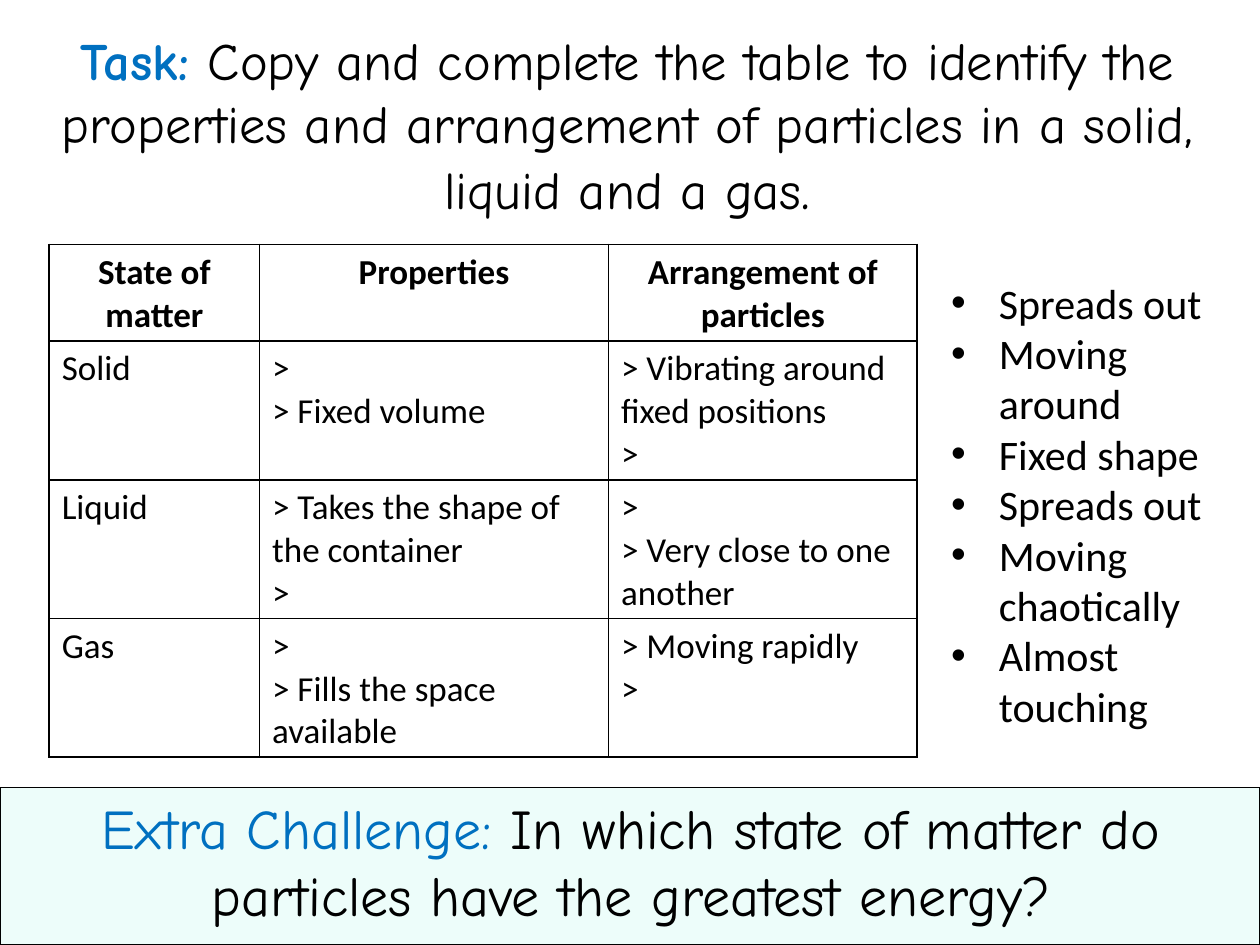
from dataclasses import dataclass

from lxml.etree import SubElement as Sub
from pptx import Presentation as Deck
from pptx.dml.color import RGBColor as Rgb
from pptx.enum.shapes import MSO_SHAPE as Shape
from pptx.enum.text import MSO_AUTO_SIZE as Fit, PP_ALIGN as Align
from pptx.oxml.ns import qn
from pptx.util import Inches, Pt


@dataclass(frozen=True)
class Theme:
    ink: str = "000000"
    blue: str = "0070C0"
    mint: str = "EDFDFA"
    hand: str = "Comic Neue"
    plain: str = "Calibri"
    task: int = 30
    large: int = 32
    list: int = 24
    cell: int = 20
    line: int = 1


class Page:
    def __init__(self, slide, theme):
        self.slide = slide
        self.theme = theme

    def run(self, para, text, font, size, color=None, bold=False):
        run = para.add_run()
        run.text = text
        run.font.name = font
        run.font.size = Pt(size)
        run.font.bold = bold
        run.font.color.rgb = Rgb.from_string(color or self.theme.ink)

    def panel(self, box, fill):
        shape = self.slide.shapes.add_shape(Shape.RECTANGLE, *map(Inches, box))
        shape.shadow.inherit = False
        shape.fill.solid()
        shape.fill.fore_color.rgb = Rgb.from_string(fill)
        shape.line.color.rgb = Rgb.from_string(self.theme.ink)
        shape.line.width = Pt(self.theme.line)

    def frame(self, box):
        frame = self.slide.shapes.add_textbox(*map(Inches, box)).text_frame
        frame.word_wrap = True
        frame.auto_size = Fit.SHAPE_TO_FIT_TEXT
        return frame

    def title(self, box, runs):
        para = self.frame(box).paragraphs[0]
        para.alignment = Align.CENTER
        for text, size, color, bold in runs:
            self.run(para, text, self.theme.hand, size, color, bold)

    def paras(self, frame, lines):
        for i, line in enumerate(lines):
            yield (frame.add_paragraph() if i else frame.paragraphs[0]), line

    def bullets(self, box, lines, indent):
        for para, line in self.paras(self.frame(box), lines):
            props = para._p.get_or_add_pPr()
            props.set("marL", str(Inches(indent)))
            props.set("indent", str(-Inches(indent)))
            Sub(props, qn("a:buFont"), typeface="Arial")
            Sub(props, qn("a:buChar"), char="•")
            self.run(para, line, self.theme.plain, self.theme.list)

    def border(self, cell):
        props = cell._tc.get_or_add_tcPr()
        for side in "LRTB":
            line = Sub(props, qn(f"a:ln{side}"), w=str(Pt(self.theme.line)))
            fill = Sub(line, qn("a:solidFill"))
            Sub(fill, qn("a:srgbClr"), val=self.theme.ink)

    def table(self, left, top, wide, high, rows):
        box = map(Inches, (left, top, sum(wide), sum(high)))
        table = self.slide.shapes.add_table(len(high), len(wide), *box).table
        table.first_row = table.horz_banding = False
        for col, width in zip(table.columns, wide):
            col.width = Inches(width)
        for i, (row, height) in enumerate(zip(table.rows, high)):
            row.height = Inches(height)
            for cell, lines in zip(row.cells, rows[i]):
                self.border(cell)
                cell.fill.background()
                for para, line in self.paras(cell.text_frame, lines):
                    para.alignment = Align.LEFT if i else Align.CENTER
                    self.run(para, line, self.theme.plain, self.theme.cell, bold=not i)


def main():
    deck = Deck()
    deck.slide_width, deck.slide_height = Inches(10), Inches(7.5)
    theme = Theme()
    page = Page(deck.slides.add_slide(deck.slide_layouts[6]), theme)

    page.panel((0, 6.25, 10, 1.25), theme.mint)
    page.title((0.17, 0.17, 9.62, 1.65), [
        ("Task: ", theme.task, theme.blue, True),
        ("Copy and complete the table to identify the properties and "
         "arrangement of particles in a solid, liquid and a gas",
         theme.task, theme.ink, False),
        (".", theme.large, theme.ink, False),
    ])
    page.title((0, 6.25, 10.02, 1.18), [
        ("Extra Challenge: ", theme.large, theme.blue, False),
        ("In which state of matter do particles have the greatest energy?",
         theme.large, theme.ink, False),
    ])
    page.table(0.39, 1.94, [1.67, 2.77, 2.45], [0.76] + [1.1] * 3, [
        [["State of matter"], ["Properties"], ["Arrangement of particles"]],
        [["Solid"], [">", "> Fixed volume"],
         ["> Vibrating around fixed positions", ">"]],
        [["Liquid"], ["> Takes the shape of the container", ">"],
         [">", "> Very close to one another"]],
        [["Gas"], [">", "> Fills the space available"],
         ["> Moving rapidly", ">"]],
    ])
    page.bullets((7.45, 2.15, 2.33, 3.74), [
        "Spreads out", "Moving around", "Fixed shape",
        "Spreads out", "Moving chaotically", "Almost touching",
    ], 0.38)
    deck.save("out.pptx")


if __name__ == "__main__":
    main()
